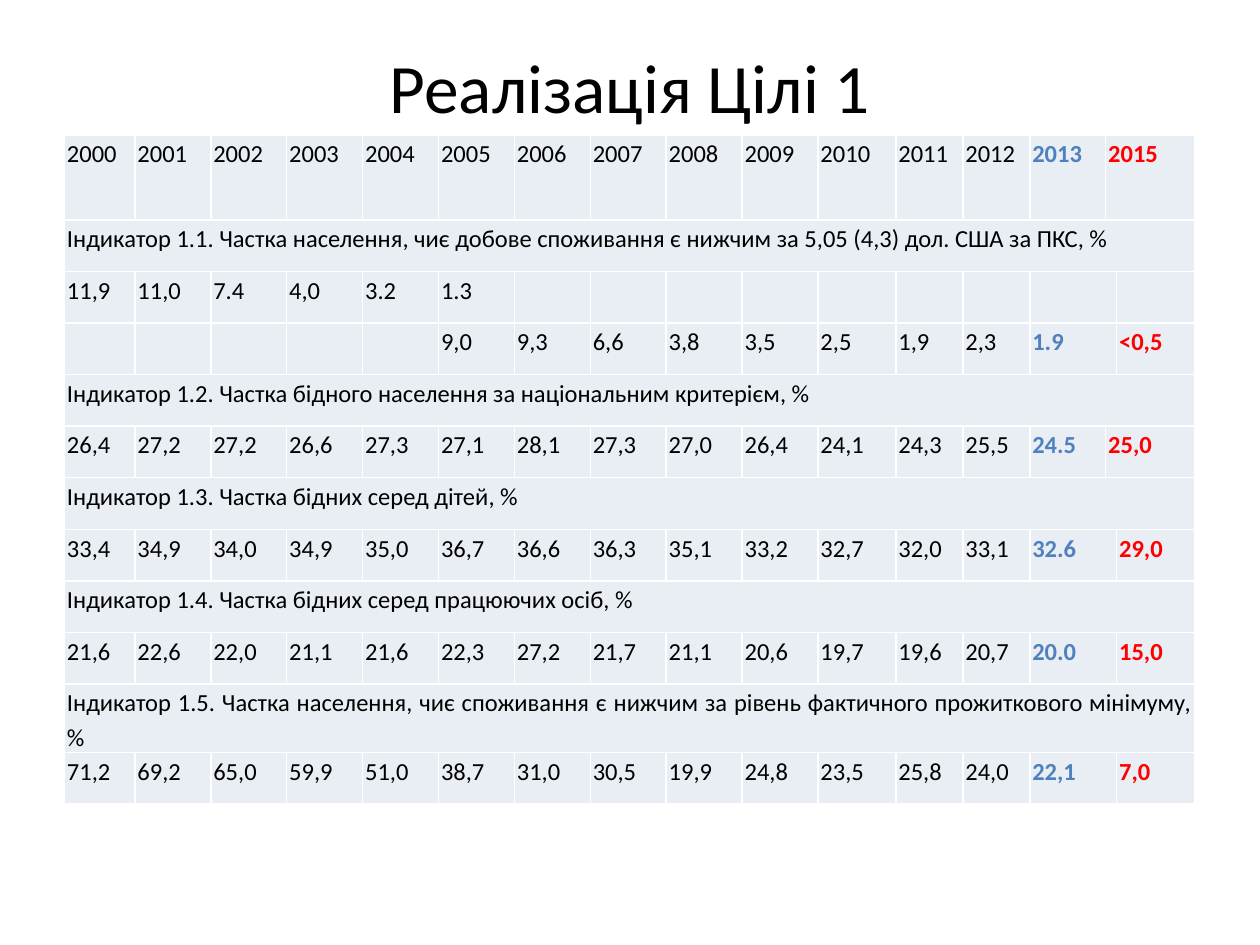
from lxml.etree import SubElement
from pptx import Presentation
from pptx.dml.color import RGBColor
from pptx.enum.text import MSO_ANCHOR, PP_ALIGN
from pptx.oxml.ns import qn
from pptx.util import Cm, Pt

FONT = "Calibri"
BLACK, WHITE, BLUE, RED, PALE = "000000", "FFFFFF", "4F81BD", "FF0000", "E9EDF4"

# The narrow column before the last one joins either 2013 or 2015.
COLUMN_WIDTHS = [1.42] + [1.53] * 9 + [1.57, 1.35, 1.35, 1.53, 0.22, 1.58]
LAST_COLUMN = len(COLUMN_WIDTHS) - 1
WIDE_2013, WIDE_2015 = 13, 14

HEADER_HEIGHT, ROW_HEIGHT, TWO_LINE_HEIGHT = 1.71, 1.04, 1.38

YEARS = [str(year) for year in range(2000, 2014)] + ["2015"]

# Indicator, then its rows: which year is widened, and the values by year
INDICATORS = [
    ("Індикатор 1.1. Частка населення, чиє добове споживання є нижчим за 5,05 (4,3) дол. США за ПКС, %",
     [(WIDE_2013, "11,9 11,0 7.4 4,0 3.2 1.3".split() + [""] * 9),
      (WIDE_2013, [""] * 5 + "9,0 9,3 6,6 3,8 3,5 2,5 1,9 2,3 1.9 <0,5".split())]),
    ("Індикатор 1.2. Частка бідного населення за національним критерієм, %",
     [(WIDE_2015, "26,4 27,2 27,2 26,6 27,3 27,1 28,1 27,3 27,0 26,4 24,1 24,3 25,5 24.5 25,0".split())]),
    ("Індикатор 1.3. Частка бідних серед дітей, %",
     [(WIDE_2013, "33,4 34,9 34,0 34,9 35,0 36,7 36,6 36,3 35,1 33,2 32,7 32,0 33,1 32.6 29,0".split())]),
    ("Індикатор 1.4. Частка бідних серед працюючих осіб, %",
     [(WIDE_2013, "21,6 22,6 22,0 21,1 21,6 22,3 27,2 21,7 21,1 20,6 19,7 19,6 20,7 20.0 15,0".split())]),
    ("Індикатор 1.5. Частка населення, чиє споживання є нижчим за рівень фактичного прожиткового мінімуму, %",
     [(WIDE_2013, "71,2 69,2 65,0 59,9 51,0 38,7 31,0 30,5 19,9 24,8 23,5 25,8 24,0 22,1 7,0".split())]),
]


def rgb(color):
    return RGBColor.from_string(color)


def add_run(paragraph, text, size, color=BLACK, bold=False):
    run = paragraph.add_run()
    run.text = text
    run.font.name = FONT
    run.font.size = Pt(size)
    run.font.bold = bold
    run.font.color.rgb = rgb(color)


def add_title(slide, text):
    title = slide.shapes.add_textbox(Cm(1.27), Cm(0.76), Cm(22.86), Cm(1.96))
    frame = title.text_frame
    frame.word_wrap = True
    frame.vertical_anchor = MSO_ANCHOR.MIDDLE
    frame.paragraphs[0].alignment = PP_ALIGN.CENTER
    add_run(frame.paragraphs[0], text, 39.6)


def add_borders(cell):
    properties = cell._tc.get_or_add_tcPr()
    for side in ("a:lnL", "a:lnR", "a:lnT", "a:lnB"):
        border = SubElement(properties, qn(side), w=str(Pt(1)))
        fill = SubElement(border, qn("a:solidFill"))
        SubElement(fill, qn("a:srgbClr"), val=WHITE)


def style_cell(cell):
    cell.margin_left = cell.margin_right = Cm(0.05)
    cell.margin_top = cell.margin_bottom = 0
    add_borders(cell)
    cell.fill.solid()
    cell.fill.fore_color.rgb = rgb(PALE)
    cell.text_frame.paragraphs[0].font.size = Pt(14)


def write_cell(cell, text, color=BLACK):
    paragraph = cell.text_frame.paragraphs[0]
    paragraph.alignment = PP_ALIGN.JUSTIFY
    paragraph.line_spacing = 1.15
    paragraph.space_after = Pt(10)
    add_run(paragraph, text, 14, color, bold=color != BLACK)


def fill_year_row(table, row, wide_column, values):
    table.cell(row, wide_column).merge(table.cell(row, wide_column + 1))
    target_column = WIDE_2015 if wide_column == WIDE_2015 else LAST_COLUMN
    columns = [*range(14), target_column]
    colors = [BLACK] * 13 + [BLUE, RED]
    for column, value, color in zip(columns, values, colors):
        if value:
            write_cell(table.cell(row, column), value, color)


def fill_indicator_row(table, row, text):
    table.cell(row, 0).merge(table.cell(row, LAST_COLUMN))
    write_cell(table.cell(row, 0), text)


def add_indicator_table(slide):
    row_count = 1 + sum(1 + len(rows) for _, rows in INDICATORS)
    heights = [HEADER_HEIGHT] + [ROW_HEIGHT] * (row_count - 1)
    heights[-2] = TWO_LINE_HEIGHT
    table = slide.shapes.add_table(
        row_count, len(COLUMN_WIDTHS), Cm(1.3), Cm(2.72),
        Cm(sum(COLUMN_WIDTHS)), Cm(sum(heights))).table
    table.first_row = table.horz_banding = False
    for column, width in zip(table.columns, COLUMN_WIDTHS):
        column.width = Cm(width)
    for row, height in zip(table.rows, heights):
        row.height = Cm(height)
    for cell in table.iter_cells():
        style_cell(cell)

    fill_year_row(table, 0, WIDE_2015, YEARS)
    row = 1
    for indicator, value_rows in INDICATORS:
        fill_indicator_row(table, row, indicator)
        for offset, (wide_column, values) in enumerate(value_rows, start=1):
            fill_year_row(table, row + offset, wide_column, values)
        row += 1 + len(value_rows)


def main():
    presentation = Presentation()
    presentation.slide_width, presentation.slide_height = Cm(25.4), Cm(19.05)
    slide = presentation.slides.add_slide(presentation.slide_layouts[6])
    add_title(slide, "Реалізація Цілі 1")
    add_indicator_table(slide)
    presentation.save("out.pptx")


if __name__ == "__main__":
    main()
